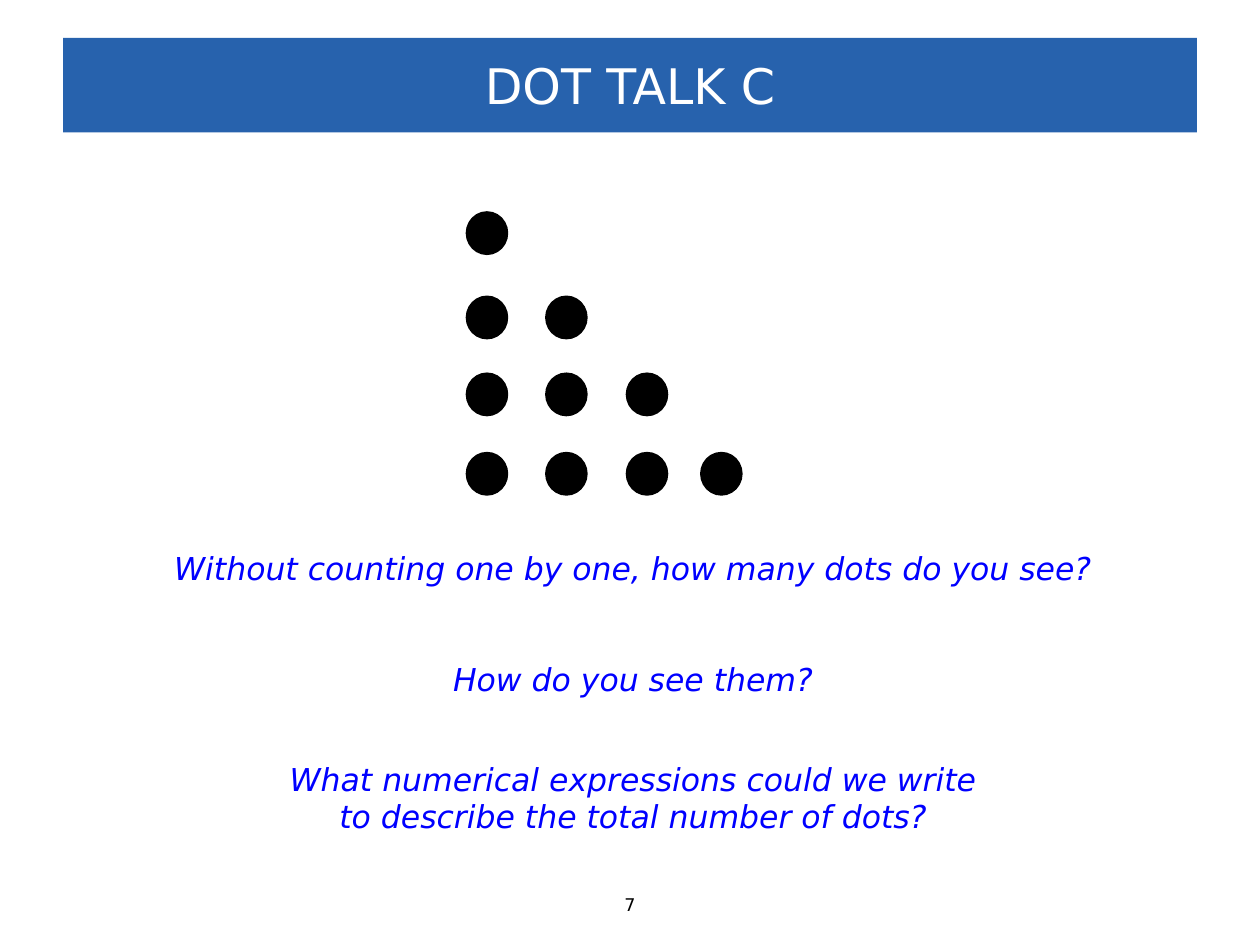
from pptx import Presentation
from pptx.dml.color import RGBColor
from pptx.enum.shapes import MSO_SHAPE
from pptx.enum.text import MSO_ANCHOR, MSO_AUTO_SIZE, PP_ALIGN
from pptx.util import Inches, Pt

COLORS = {"banner": "2762AD", "title": "FFFFFF", "question": "0000FF", "ink": "000000"}
FONT = "DejaVu Sans"
QUESTION = {"size": Pt(18), "italic": True}
COLUMN_LEFTS = (3.71, 4.34, 4.98, 5.57)
ROW_TOPS = (1.69, 2.36, 2.97, 3.6)
DOT_WIDTH, DOT_HEIGHT = 0.31, 0.32


def color(name):
    return RGBColor.from_string(COLORS[name])


def write_text(frame, text, color_name, font_format):
    para = frame.paragraphs[0]
    para.alignment = PP_ALIGN.CENTER
    span = para.add_run()
    span.text = text
    for name, value in {"name": FONT, **font_format}.items():
        setattr(span.font, name, value)
    span.font.color.rgb = color(color_name)


def add_title(page, text):
    title = page.shapes.title
    title.left, title.top, title.width, title.height = map(Inches, (0.5, 0.3, 9, 0.75))
    title.fill.solid()
    title.fill.fore_color.rgb = color("banner")
    title.text_frame.vertical_anchor = MSO_ANCHOR.MIDDLE
    title.text_frame.auto_size = MSO_AUTO_SIZE.NONE
    write_text(title.text_frame, text, "title", {"size": Pt(28)})


def add_text(page, bounds, text, color_name, font_format, wrap=False):
    box = page.shapes.add_textbox(*map(Inches, bounds))
    box.text_frame.word_wrap = wrap
    box.text_frame.auto_size = MSO_AUTO_SIZE.SHAPE_TO_FIT_TEXT
    write_text(box.text_frame, text, color_name, font_format)


def add_dot(group, left, top):
    dot = group.shapes.add_shape(
        MSO_SHAPE.OVAL, *map(Inches, (left, top, DOT_WIDTH, DOT_HEIGHT))
    )
    dot.shadow.inherit = False
    dot.fill.solid()
    dot.fill.fore_color.rgb = color("ink")
    dot.line.color.rgb = color("ink")
    dot.line.width = Pt(2)


def add_dot_triangle(page):
    group = page.shapes.add_group_shape()
    for row, top in enumerate(ROW_TOPS):
        for left in COLUMN_LEFTS[:row + 1]:
            add_dot(group, left, top)


def main():
    deck = Presentation()
    deck.slide_width, deck.slide_height = Inches(10), Inches(7.5)
    page = deck.slides.add_slide(deck.slide_layouts[5])
    add_title(page, "DOT TALK C")
    add_text(page, (4.78, 7.05, 0.44, 0.27), "7", "ink", {"size": Pt(10)})
    add_text(page, (1.22, 4.31, 7.61, 0.4),
             "Without counting one by one, how many dots do you see?", "question", QUESTION)
    add_text(page, (3.47, 5.19, 3.11, 0.4), "How do you see them?", "question", QUESTION)
    add_text(page, (2.08, 5.98, 5.89, 0.71),
             "What numerical expressions could we write to describe the total number of dots?",
             "question", QUESTION, wrap=True)
    add_dot_triangle(page)
    deck.save("out.pptx")


if __name__ == "__main__":
    main()
